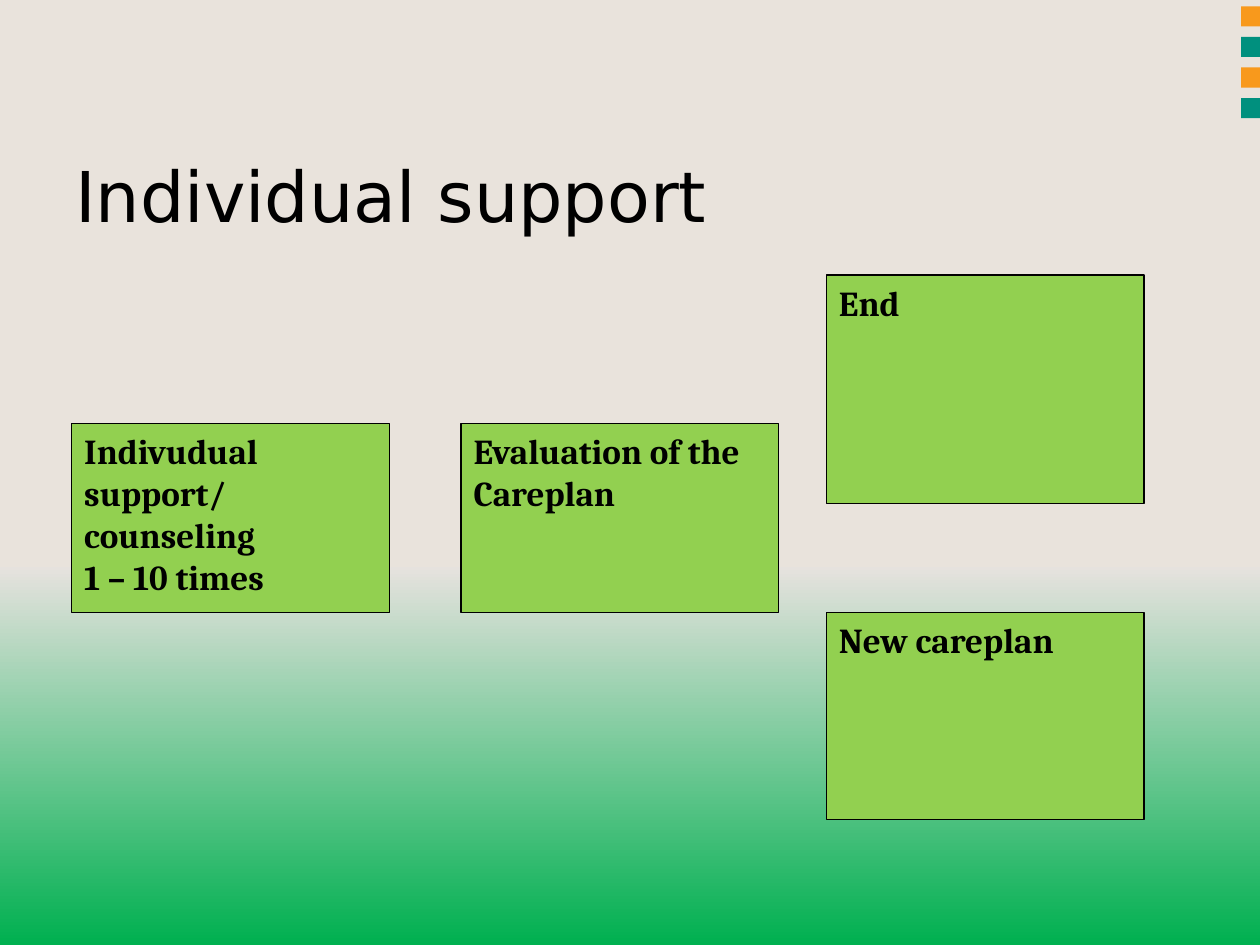
import copy
from dataclasses import dataclass

import pptx
import pptx.dml.color
import pptx.enum.shapes
import pptx.enum.text
import pptx.oxml.ns
import pptx.util

WIDE, HIGH = 10, 7.5
SAND, ORANGE, TEAL = "E9E3DC", "F8991C", "00907E"
LIME, BLACK = "92D050", "000000"
FADE = [(0, SAND), (0.6, "E6E2DE"), (1, "00B050")]

# Shares of the slide's width and height
COLS = (0.057, 0.366, 0.656)
ROWS = (0.291, 0.448, 0.648)
BOX_WIDTH = 0.252


@dataclass
class Step:
    col: int
    row: int
    height: float
    lines: tuple[str, ...]


STEPS = [
    Step(0, 1, 0.2, ("Indivudual", "support/", "counseling", "1 – 10 times")),
    Step(1, 1, 0.2, ("Evaluation of the", "Careplan")),
    Step(2, 0, 0.242, ("End",)),
    Step(2, 2, 0.219, ("New careplan",)),
]


def tint(code: str) -> pptx.dml.color.RGBColor:
    return pptx.dml.color.RGBColor.from_string(code)


def place(x: float, y: float, w: float, h: float) -> list[int]:
    """Turn shares of the slide into lengths."""
    return [pptx.util.Inches(part * full)
            for part, full in zip((x, y, w, h), (WIDE, HIGH, WIDE, HIGH))]


def draw_block(shapes, spot: list[int], color: str):
    block = shapes.add_shape(pptx.enum.shapes.MSO_SHAPE.RECTANGLE, *spot)
    block.shadow.inherit = False
    block.fill.solid()
    block.fill.fore_color.rgb = tint(color)
    block.line.fill.background()
    return block


def write(frame, lines: tuple[str, ...], face: str, size: int,
          bold: bool, anchor) -> None:
    frame.word_wrap = True
    frame.vertical_anchor = anchor
    frame.text = "\n".join(lines)
    for para in frame.paragraphs:
        para.alignment = pptx.enum.text.PP_ALIGN.LEFT
        para.font.name = face
        para.font.size = pptx.util.Pt(size)
        para.font.bold = bold
        para.font.color.rgb = tint(BLACK)


def draw_step(shapes, step: Step) -> None:
    spot = place(COLS[step.col], ROWS[step.row], BOX_WIDTH, step.height)
    box = draw_block(shapes, spot, LIME)
    box.line.color.rgb = tint(BLACK)
    box.line.width = pptx.util.Pt(0.75)
    write(box.text_frame, step.lines, "Cambria", 20, True,
          pptx.enum.text.MSO_ANCHOR.TOP)


def paint_back(slide) -> None:
    fill = slide.background.fill
    fill.gradient()
    fill.gradient_angle = 270
    stops = next(slide.element.iter(pptx.oxml.ns.qn("a:gsLst")))
    stops.append(copy.deepcopy(stops[-1]))
    for stop, (point, color) in zip(fill.gradient_stops, FADE):
        stop.position = point
        stop.color.rgb = tint(color)


def main() -> None:
    deck = pptx.Presentation()
    deck.slide_width = pptx.util.Inches(WIDE)
    deck.slide_height = pptx.util.Inches(HIGH)
    slide = deck.slides.add_slide(deck.slide_layouts[6])
    shapes = slide.shapes
    paint_back(slide)

    # Top band with its column of small squares
    draw_block(shapes, place(0, 0, 1, 0.132), SAND)
    marks = shapes.add_group_shape().shapes
    side, pitch = 0.16, 0.243
    for index, color in enumerate((ORANGE, TEAL) * 2):
        top = 0.05 + index * pitch
        spot = place(0.985, top / HIGH, side / WIDE, side / HIGH)
        draw_block(marks, spot, color)

    # Steps of the care process
    for step in STEPS:
        draw_step(shapes, step)

    # Title
    title = shapes.add_textbox(*place(0.05, 0.132, 0.9, 0.147))
    write(title.text_frame, ("Individual support",), "DejaVu Sans", 40, False,
          pptx.enum.text.MSO_ANCHOR.MIDDLE)

    deck.save("out.pptx")


if __name__ == "__main__":
    main()
